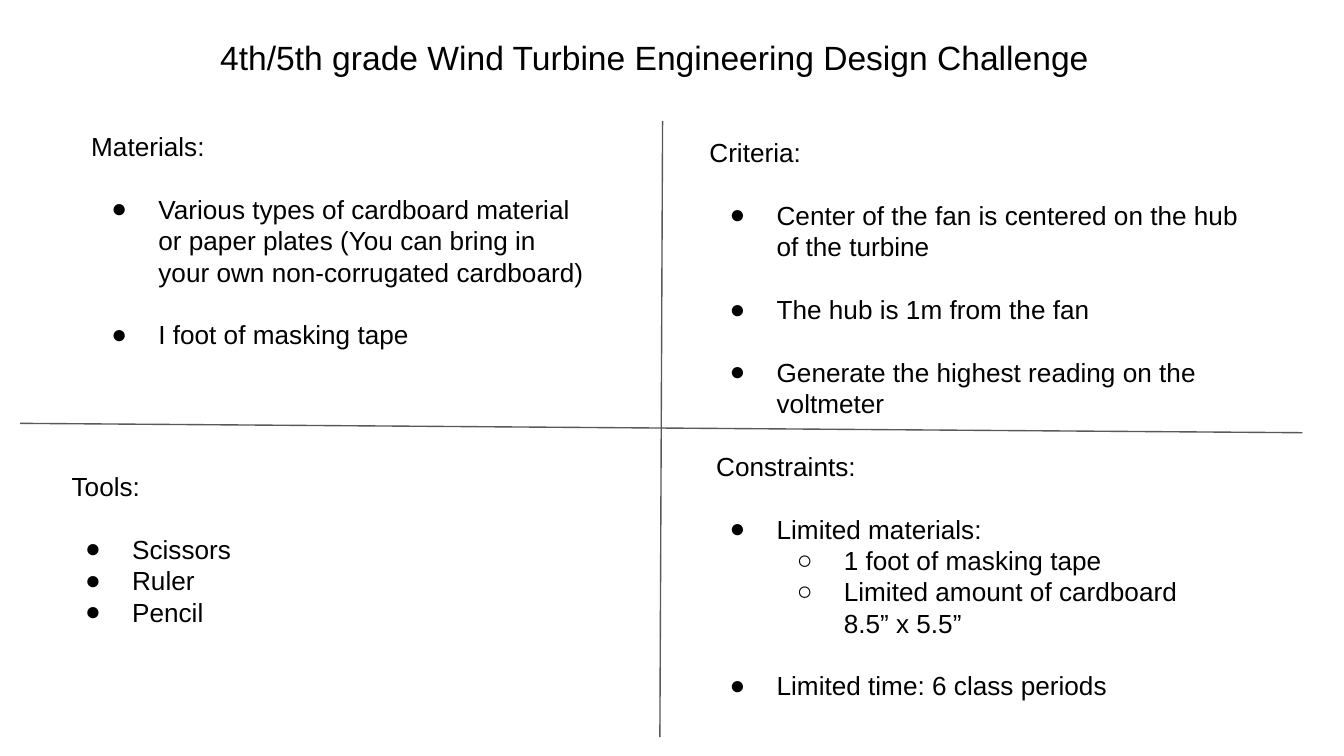
from dataclasses import dataclass

from lxml import etree
from pptx import Presentation
from pptx.dml.color import RGBColor
from pptx.enum.shapes import MSO_CONNECTOR
from pptx.enum.text import MSO_ANCHOR, PP_ALIGN
from pptx.oxml.ns import qn
from pptx.slide import Slide
from pptx.util import Pt

STRAIGHT = MSO_CONNECTOR.STRAIGHT
TOP = MSO_ANCHOR.TOP
LEFT = PP_ALIGN.LEFT
CENTER = PP_ALIGN.CENTER

EMU_PER_PX = 4572
SLIDE_SIZE = (2000, 1125)
FONT = "Arial"
COLORS = {"text": "000000", "divider": "595959"}
BULLETS = ("●", "○")
INSET = 20
LEVEL_STEP = 100
HANGING = -70
LINE_FACTOR = 1.2
BODY_SIZE = 14
TITLE_SIZE = 18


@dataclass(frozen=True)
class Divider:
    start: tuple[int, int]
    end: tuple[int, int]


@dataclass(frozen=True)
class Item:
    lines: tuple[str, ...]
    level: int = 0
    gap: bool = True


@dataclass(frozen=True)
class TextBlock:
    box: tuple[int, int, int, int]
    heading: str
    items: tuple[Item, ...] = ()
    heading_indent: int = 0
    size: int = BODY_SIZE
    alignment: PP_ALIGN = LEFT


DIVIDERS = (
    Divider((986, 180), (982, 1097)),
    Divider((30, 630), (1938, 644)),
)

BLOCKS = (
    TextBlock((116, 174, 784, 438), "Materials:", (
        Item(("Various types of cardboard material or paper plates "
              "(You can bring in your own non-corrugated cardboard)",)),
        Item(("I foot of masking tape",)),
    )),
    TextBlock((1036, 183, 842, 442), "Criteria:", (
        Item(("Center of the fan is centered on the hub of the turbine",)),
        Item(("The hub is 1m from the fan",)),
        Item(("Generate the highest reading on the voltmeter",)),
    )),
    TextBlock((1036, 650, 842, 442), "Constraints:", (
        Item(("Limited materials:",)),
        Item(("1 foot of masking tape",), level=1, gap=False),
        Item(("Limited amount of cardboard", "8.5” x 5.5”"), level=1, gap=False),
        Item(("Limited time: 6 class periods",)),
    ), heading_indent=10),
    TextBlock((77, 680, 886, 416), "Tools:", (
        Item(("Scissors",)),
        Item(("Ruler",), gap=False),
        Item(("Pencil",), gap=False),
    ), heading_indent=10),
    TextBlock((274, 35, 1400, 90),
              "4th/5th grade Wind Turbine Engineering Design Challenge",
              size=TITLE_SIZE, alignment=CENTER),
)


def px(length: int) -> int:
    return length * EMU_PER_PX


def draw_divider(slide: Slide, divider: Divider) -> None:
    points = [px(value) for value in divider.start + divider.end]
    connector = slide.shapes.add_connector(STRAIGHT, *points)
    connector.line.color.rgb = RGBColor.from_string(COLORS["divider"])
    connector.line.width = Pt(0.75)
    etree.SubElement(connector._element.spPr, qn("a:effectLst"))


def write_lines(paragraph, lines: tuple[str, ...], size: int) -> None:
    paragraph.line_spacing = Pt(size * LINE_FACTOR)
    for index, line in enumerate(lines):
        if index:
            paragraph.add_line_break()
        run = paragraph.add_run()
        run.text = line
        run.font.name = FONT
        run.font.size = Pt(size)
        run.font.color.rgb = RGBColor.from_string(COLORS["text"])


def set_indent(paragraph, margin: int, indent: int = 0):
    properties = paragraph._p.get_or_add_pPr()
    properties.set("marL", str(px(margin)))
    properties.set("indent", str(px(indent)))
    return properties


def add_bullet(paragraph, level: int) -> None:
    paragraph.level = level
    properties = set_indent(paragraph, LEVEL_STEP * (level + 1), HANGING)
    color = etree.SubElement(properties, qn("a:buClr"))
    etree.SubElement(color, qn("a:srgbClr"), val=COLORS["text"])
    etree.SubElement(properties, qn("a:buFont"), typeface=FONT)
    etree.SubElement(properties, qn("a:buChar"), char=BULLETS[level])


def draw_block(slide: Slide, block: TextBlock) -> None:
    shape = slide.shapes.add_textbox(*(px(value) for value in block.box))
    frame = shape.text_frame
    frame.word_wrap = True
    frame.vertical_anchor = TOP
    frame.margin_left = frame.margin_right = px(INSET)
    frame.margin_top = frame.margin_bottom = px(INSET)
    heading = frame.paragraphs[0]
    heading.alignment = block.alignment
    set_indent(heading, block.heading_indent)
    write_lines(heading, (block.heading,), block.size)
    for item in block.items:
        paragraph = frame.add_paragraph()
        paragraph.space_before = Pt(block.size * LINE_FACTOR if item.gap else 0)
        write_lines(paragraph, item.lines, block.size)
        add_bullet(paragraph, item.level)


def main() -> None:
    presentation = Presentation()
    presentation.slide_width, presentation.slide_height = map(px, SLIDE_SIZE)
    slide = presentation.slides.add_slide(presentation.slide_layouts[6])
    for divider in DIVIDERS:
        draw_divider(slide, divider)
    for block in BLOCKS:
        draw_block(slide, block)
    presentation.save("out.pptx")


if __name__ == "__main__":
    main()
